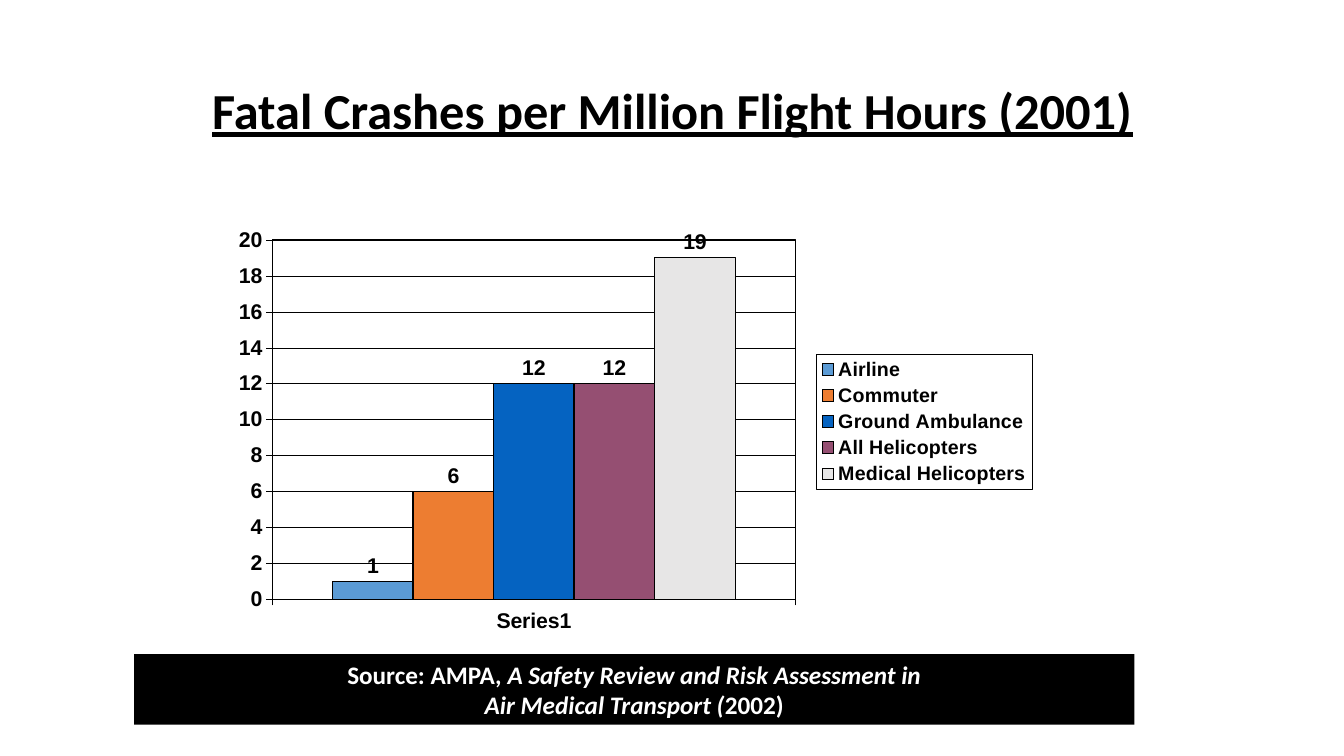
import pptx
import pptx.chart.data
import pptx.dml.color
import pptx.enum.chart
import pptx.enum.shapes
import pptx.enum.text
import pptx.oxml
import pptx.oxml.ns
import pptx.util

Inches = pptx.util.Inches
Pt = pptx.util.Pt
qn = pptx.oxml.ns.qn
ALIGN = pptx.enum.text.PP_ALIGN
ANCHOR = pptx.enum.text.MSO_ANCHOR
CHART = pptx.enum.chart

COLORS = {
    "black": "000000",
    "white": "FFFFFF",
    "Airline": "5B9BD5",
    "Commuter": "ED7D31",
    "Ground Ambulance": "0563C1",
    "All Helicopters": "954F72",
    "Medical Helicopters": "E7E6E6",
}
RATES = {
    "Airline": 1,
    "Commuter": 6,
    "Ground Ambulance": 12,
    "All Helicopters": 12,
    "Medical Helicopters": 19,
}


def rgb(name):
    return pptx.dml.color.RGBColor.from_string(COLORS[name])


def style(font, size, face, color="black"):
    font.size = Pt(size)
    font.name = face
    font.bold = True
    font.color.rgb = rgb(color)


prs = pptx.Presentation()
prs.slide_width = Inches(13.33)
prs.slide_height = Inches(7.5)
slide = prs.slides.add_slide(prs.slide_layouts[6])

# Title
title = slide.shapes.add_textbox(Inches(0.92), Inches(0.4), Inches(11.5), Inches(1.45))
frame = title.text_frame
frame.word_wrap = True
frame.vertical_anchor = ANCHOR.MIDDLE
para = frame.paragraphs[0]
para.alignment = ALIGN.CENTER
para.line_spacing = 0.9
run = para.add_run()
run.text = "Fatal Crashes per Million Flight Hours (2001)"
style(run.font, 36, "Calibri")
run.font.underline = True

# Chart
data = pptx.chart.data.CategoryChartData()
data.categories = ["Series1"]
for name, rate in RATES.items():
    data.add_series(name, [rate])
chart = slide.shapes.add_chart(
    CHART.XL_CHART_TYPE.COLUMN_CLUSTERED,
    Inches(2.17), Inches(2.08), Inches(8.15), Inches(4.21), data,
).chart
chart.has_title = False
style(chart.font, 15.2, "Arial")

plot = chart.plots[0]
plot.gap_width = 150
plot.overlap = 0
plot.vary_by_categories = False
for series in plot.series:
    series.format.fill.solid()
    series.format.fill.fore_color.rgb = rgb(series.name)
    series.format.line.color.rgb = rgb("black")
    series.format.line.width = Pt(1)
    labels = series.data_labels
    labels.show_value = True
    labels.position = CHART.XL_LABEL_POSITION.OUTSIDE_END
    style(labels.font, 15.2, "Arial")

scale = chart.value_axis
scale.minimum_scale = 0
scale.maximum_scale = 20
scale.major_unit = 2
scale.has_major_gridlines = True
for axis in (chart.category_axis, scale):
    axis.major_tick_mark = CHART.XL_TICK_MARK.OUTSIDE
    axis.minor_tick_mark = CHART.XL_TICK_MARK.NONE
    style(axis.tick_labels.font, 15.2, "Arial")
for line in (chart.category_axis.format.line, scale.format.line,
             scale.major_gridlines.format.line):
    line.color.rgb = rgb("black")
    line.width = Pt(0.25)

chart.has_legend = True
legend = chart.legend
legend.position = CHART.XL_LEGEND_POSITION.RIGHT
legend.include_in_layout = False
style(legend.font, 14, "Arial")

# Plot placement, and the frames of plot and legend
NS = pptx.oxml.ns.nsdecls("c", "a")
area = chart._chartSpace.chart.plotArea
for old in area.findall(qn("c:layout")):
    area.remove(old)
place = {"x": 0.065, "y": 0.071, "w": 0.637, "h": 0.848}
sides = "".join(f'<c:{key} val="{part}"/>' for key, part in place.items())
area.insert(0, pptx.oxml.parse_xml(
    f'<c:layout {NS}><c:manualLayout><c:layoutTarget val="inner"/>'
    f'<c:xMode val="edge"/><c:yMode val="edge"/>{sides}'
    "</c:manualLayout></c:layout>"))
for last, width in ((area[-1], 1), (legend._element.find(qn("c:overlay")), 0.25)):
    last.addnext(pptx.oxml.parse_xml(
        f'<c:spPr {NS}><a:solidFill><a:srgbClr val="{COLORS["white"]}"/></a:solidFill>'
        f'<a:ln w="{Pt(width)}"><a:solidFill><a:srgbClr val="{COLORS["black"]}"/>'
        "</a:solidFill></a:ln></c:spPr>"))

# Source
band = slide.shapes.add_shape(
    pptx.enum.shapes.MSO_SHAPE.RECTANGLE,
    Inches(1.33), Inches(6.49), Inches(9.92), Inches(0.7))
band.shadow.inherit = False
band.fill.solid()
band.fill.fore_color.rgb = rgb("black")
band.line.fill.background()
frame = band.text_frame
frame.word_wrap = True
frame.vertical_anchor = ANCHOR.MIDDLE
lines = [
    [("Source: AMPA, ", False), ("A Safety Review and Risk Assessment in", True)],
    [("Air Medical Transport (", True), ("2002)", False)],
]
for i, parts in enumerate(lines):
    para = frame.add_paragraph() if i else frame.paragraphs[0]
    para.alignment = ALIGN.CENTER
    for text, slant in parts:
        run = para.add_run()
        run.text = text
        style(run.font, 18, "Calibri", "white")
        run.font.italic = slant

prs.save("out.pptx")
